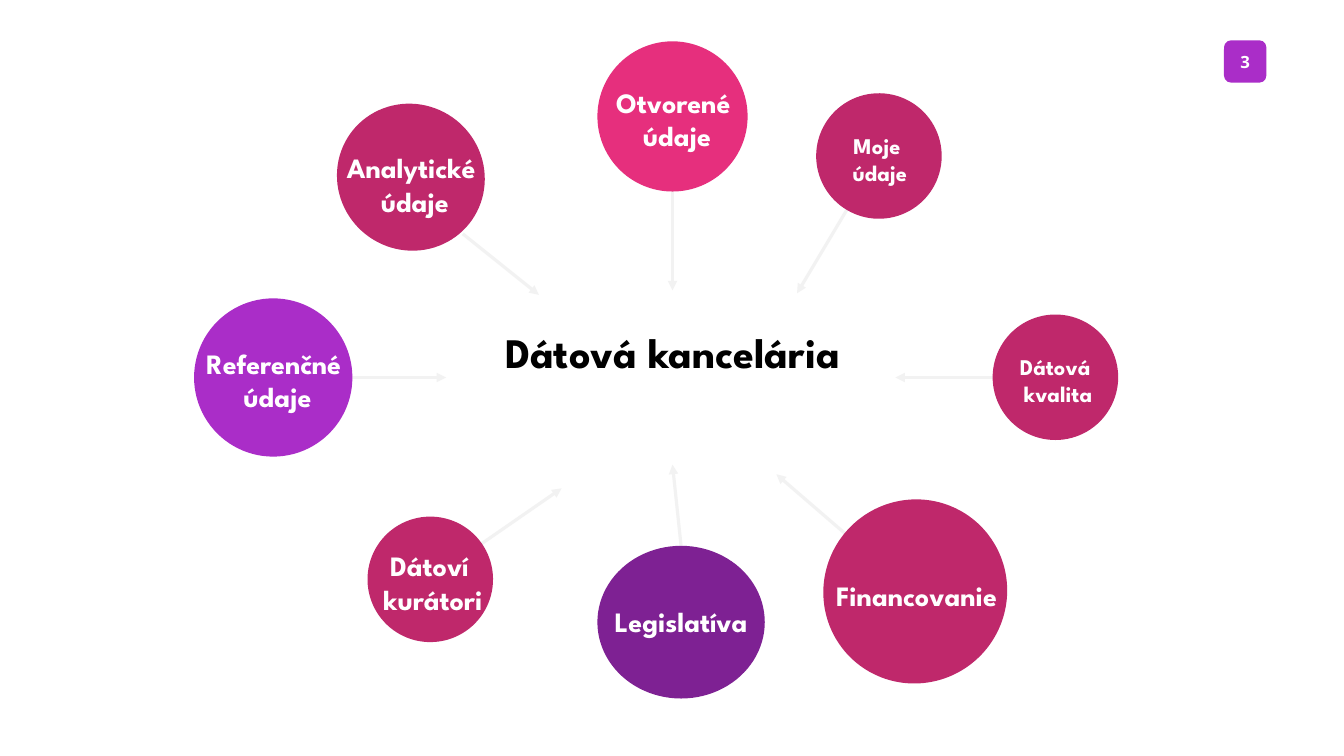
from dataclasses import dataclass

from lxml import etree
from pptx import Presentation
from pptx.dml.color import RGBColor
from pptx.enum.shapes import MSO_CONNECTOR, MSO_SHAPE
from pptx.enum.text import MSO_ANCHOR, MSO_AUTO_SIZE, PP_ALIGN
from pptx.oxml.ns import qn
from pptx.util import Pt

PX = 9144  # EMU in one px, 100 px to the inch
STRAIGHT = MSO_CONNECTOR.STRAIGHT
OVAL = MSO_SHAPE.OVAL
ROUNDED = MSO_SHAPE.ROUNDED_RECTANGLE
CENTER = PP_ALIGN.CENTER
TOP, MIDDLE = MSO_ANCHOR.TOP, MSO_ANCHOR.MIDDLE
GROW = MSO_AUTO_SIZE.SHAPE_TO_FIT_TEXT


@dataclass(frozen=True)
class Theme:
    white: str = "FFFFFF"
    black: str = "000000"
    arrow: str = "F2F2F2"
    pink: str = "E62F7D"
    berry: str = "BF286B"
    violet: str = "AA2DC8"
    purple: str = "7E2193"
    heading_font: str = "League Spartan"
    number_font: str = "Open Sans"
    title_size: int = 60
    title_leading: int = 70
    large: int = 40
    small: int = 32
    number_size: int = 24
    arrow_width: float = 4.5


THEME = Theme()


@dataclass(frozen=True)
class Bubble:
    """A labelled circle; label box and arrow ends are measured from its box."""
    text: str  # \n starts a paragraph, \v breaks a line
    box: tuple
    label: tuple
    arrow: tuple
    color: str = THEME.berry
    size: int = THEME.large
    rotation: float = 0


BUBBLES = [
    Bubble("Otvorené\n údaje", (1185, 82, 298, 298), (17, 81, 267, 145),
           (149, 279, 149, 494), color=THEME.pink),
    Bubble("Legislatíva", (1185, 1083, 332, 303), (11, 111, 310, 77),
           (166, 0, 149, -161), color=THEME.purple),
    Bubble("Dátová\v kvalita", (1969, 624, 249, 249), (38, 71, 172, 118),
           (0, 125, -193, 125), size=THEME.small),
    Bubble("Referenčné\v údaje", (385, 592, 314, 314), (-5, 89, 326, 145),
           (314, 157, 500, 157), color=THEME.violet),
    Bubble("Moje \núdaje", (1619, 185, 249, 249), (58, 71, 137, 118),
           (61, 231, -38, 397), size=THEME.small, rotation=300.9),
    Bubble("Financovanie", (1634, 990, 363, 367), (-5, 152, 378, 77),
           (52, 77, -94, -49), rotation=40.6),
    Bubble("Analytické \núdaje", (667, 207, 296, 289), (-2, 86, 316, 145),
           (251, 257, 402, 378), rotation=218.6),
    Bubble("Dátoví\n kurátori", (729, 1025, 249, 249), (0, 58, 245, 145),
           (226, 54, 385, -56), rotation=145.3),
]


def emu(lengths):
    return [length * PX for length in lengths]


def write(frame, text, size, color, font, anchor=MIDDLE, leading=None):
    frame.word_wrap = False
    frame.vertical_anchor = anchor
    frame.text = text
    for paragraph in frame.paragraphs:
        paragraph.alignment = CENTER
        if leading:
            paragraph.line_spacing = Pt(leading)
        paragraph.font.size = Pt(size)
        paragraph.font.bold = True
        paragraph.font.name = font
        paragraph.font.color.rgb = RGBColor.from_string(color)


def add_label(page, box, text, size, color, anchor=MIDDLE, leading=None):
    frame = page.shapes.add_textbox(*emu(box)).text_frame
    write(frame, text, size, color, THEME.heading_font, anchor, leading)
    frame.auto_size = GROW


def add_filled(page, kind, box, color):
    shape = page.shapes.add_shape(kind, *emu(box))
    shape.shadow.inherit = False
    shape.fill.solid()
    shape.fill.fore_color.rgb = RGBColor.from_string(color)
    shape.line.fill.background()
    return shape


def add_arrow(page, ends):
    arrow = page.shapes.add_connector(STRAIGHT, *emu(ends))
    arrow.line.width = Pt(THEME.arrow_width)
    arrow.line.color.rgb = RGBColor.from_string(THEME.arrow)
    properties = arrow.element.spPr
    outline = properties.find(qn("a:ln"))
    etree.SubElement(outline, qn("a:tailEnd"), type="triangle")
    etree.SubElement(properties, qn("a:effectLst"))


def draw_bubble(page, bubble):
    left, top, _, _ = bubble.box
    # Arrow towards the centre, partly under the circle
    start_x, start_y, end_x, end_y = bubble.arrow
    add_arrow(page, (left + start_x, top + start_y, left + end_x, top + end_y))
    # Circle
    circle = add_filled(page, OVAL, bubble.box, bubble.color)
    circle.rotation = bubble.rotation
    # Label
    dx, dy, width, height = bubble.label
    add_label(page, (left + dx, top + dy, width, height),
              bubble.text, bubble.size, THEME.white)


def draw_page_number(page, box, number):
    badge = add_filled(page, ROUNDED, box, THEME.violet)
    write(badge.text_frame, number, THEME.number_size, THEME.white, THEME.number_font)


def main():
    deck = Presentation()
    deck.slide_width, deck.slide_height = emu((2666, 1500))
    page = deck.slides.add_slide(deck.slide_layouts[6])

    draw_page_number(page, (2428, 80, 84, 84), "3")
    # Centre title
    add_label(page, (966, 646, 736, 108), "Dátová kancelária", THEME.title_size,
              THEME.black, TOP, THEME.title_leading)
    # Ring of topics
    for bubble in BUBBLES:
        draw_bubble(page, bubble)

    deck.save("out.pptx")


if __name__ == "__main__":
    main()
